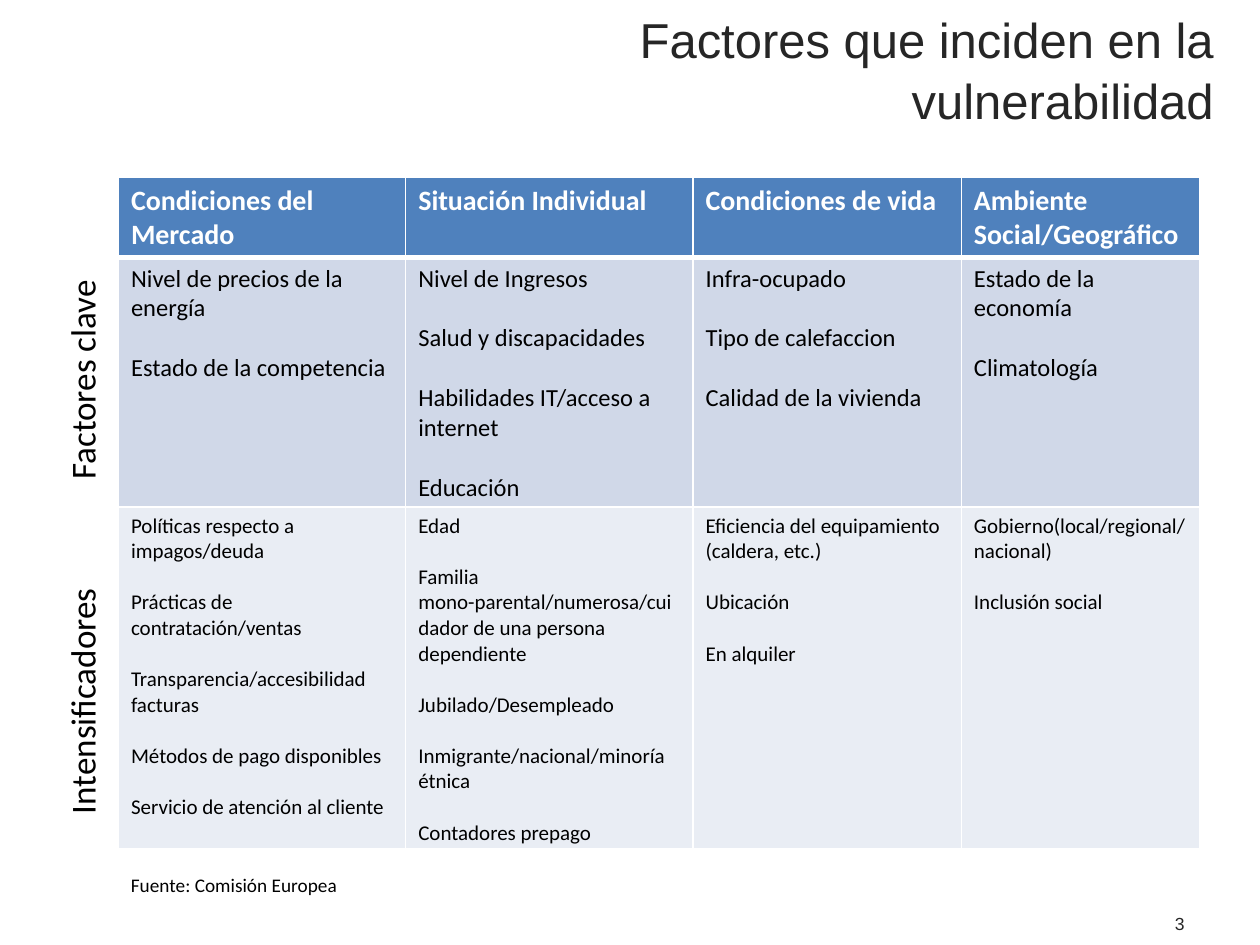
from lxml import etree
from pptx import Presentation
from pptx.dml.color import RGBColor as RGB
from pptx.enum.text import MSO_ANCHOR as Anchor, PP_ALIGN as Align
from pptx.oxml.ns import qn
from pptx.util import Inches, Pt

BLACK = RGB(0x00, 0x00, 0x00)
WHITE = RGB(0xFF, 0xFF, 0xFF)
DARK = RGB(0x26, 0x26, 0x26)
BLUE = RGB(0x4F, 0x81, 0xBD)
MID = RGB(0xD0, 0xD8, 0xE8)
PALE = RGB(0xE9, 0xED, 0xF4)


def style(para, color, **form):
    for key, val in form.items():
        setattr(para.font, key, val)
    para.font.color.rgb = color


def label(text, spot, color, size, name, align, line=None, turn=0, anchor=Anchor.TOP):
    box = slide.shapes.add_textbox(*[Inches(n) for n in spot])
    box.rotation = turn
    frame = box.text_frame
    frame.word_wrap = True
    frame.vertical_anchor = anchor
    para = frame.paragraphs[0]
    para.text = text
    para.alignment = align
    para.line_spacing = line
    style(para, color, size=Pt(size), name=name)


prs = Presentation()
prs.slide_width = Inches(10)
prs.slide_height = Inches(7.5)
slide = prs.slides.add_slide(prs.slide_layouts[6])

label("3", (7.17, 7.13, 2.33, 0.4), DARK, 10, "Arial", Align.RIGHT, anchor=Anchor.MIDDLE)
label("Factores que inciden en la vulnerabilidad", (2.66, 0, 7.07, 0.79),
      DARK, 28, "Arial", Align.RIGHT, line=1.05)

rows = [
    (0.58, BLUE, WHITE, 16, 3, [
        ["Condiciones del Mercado"],
        ["Situación Individual"],
        ["Condiciones de vida"],
        ["Ambiente Social/Geográfico"],
    ]),
    (1.8, MID, BLACK, 14, 1, [
        ["Nivel de precios de la energía", "Estado de la competencia"],
        ["Nivel de Ingresos", "Salud y discapacidades",
         "Habilidades IT/acceso a internet", "Educación"],
        ["Infra-ocupado", "Tipo de calefaccion", "Calidad de la vivienda"],
        ["Estado de la economía", "Climatología"],
    ]),
    (2.47, PALE, BLACK, 12, 1, [
        ["Políticas respecto a impagos/deuda", "Prácticas de contratación/ventas",
         "Transparencia/accesibilidad facturas", "Métodos de pago disponibles",
         "Servicio de atención al cliente"],
        ["Edad", "Familia mono-parental/numerosa/cuidador de una persona dependiente",
         "Jubilado/Desempleado", "Inmigrante/nacional/minoría étnica",
         "Contadores prepago"],
        ["Eficiencia del equipamiento (caldera, etc.)", "Ubicación", "En alquiler"],
        ["Gobierno(local/regional/ nacional)", "Inclusión social"],
    ]),
]
table = slide.shapes.add_table(3, 4, Inches(0.94), Inches(1.41),
                               Inches(8.58), Inches(4.85)).table
for col, width in zip(table.columns, (2.28, 2.28, 2.13, 1.89)):
    col.width = Inches(width)

for r, (height, fill, color, size, rule, cells) in enumerate(rows):
    table.rows[r].height = Inches(height)
    top = 3 if r == 1 else 1
    for c, items in enumerate(cells):
        cell = table.cell(r, c)
        cell.text = "\n".join(items)
        for i, para in enumerate(cell.text_frame.paragraphs):
            style(para, color, size=Pt(size), name="Calibri", bold=r == 0)
            if i:
                para.space_before = Pt(round(size * 1.22, 1))
        props = cell._tc.get_or_add_tcPr()
        for side, width in (("L", 1), ("R", 1), ("T", top), ("B", rule)):
            edge = etree.SubElement(props, qn("a:ln" + side), w=str(Pt(width)))
            solid = etree.SubElement(edge, qn("a:solidFill"))
            etree.SubElement(solid, qn("a:srgbClr"), val=str(WHITE))
        cell.fill.solid()
        cell.fill.fore_color.rgb = fill

for text, spot in (("Factores clave", (-0.3, 2.8, 1.97, 0.43)),
                   ("Intensificadores", (-0.43, 5.35, 2.23, 0.43))):
    label(text, spot, BLACK, 20, "Calibri", Align.CENTER, line=0.9, turn=270)

label("Fuente: Comisión Europea", (0.94, 6.88, 2.89, 0.29), BLACK, 11, "Calibri", Align.LEFT)

prs.save("out.pptx")
